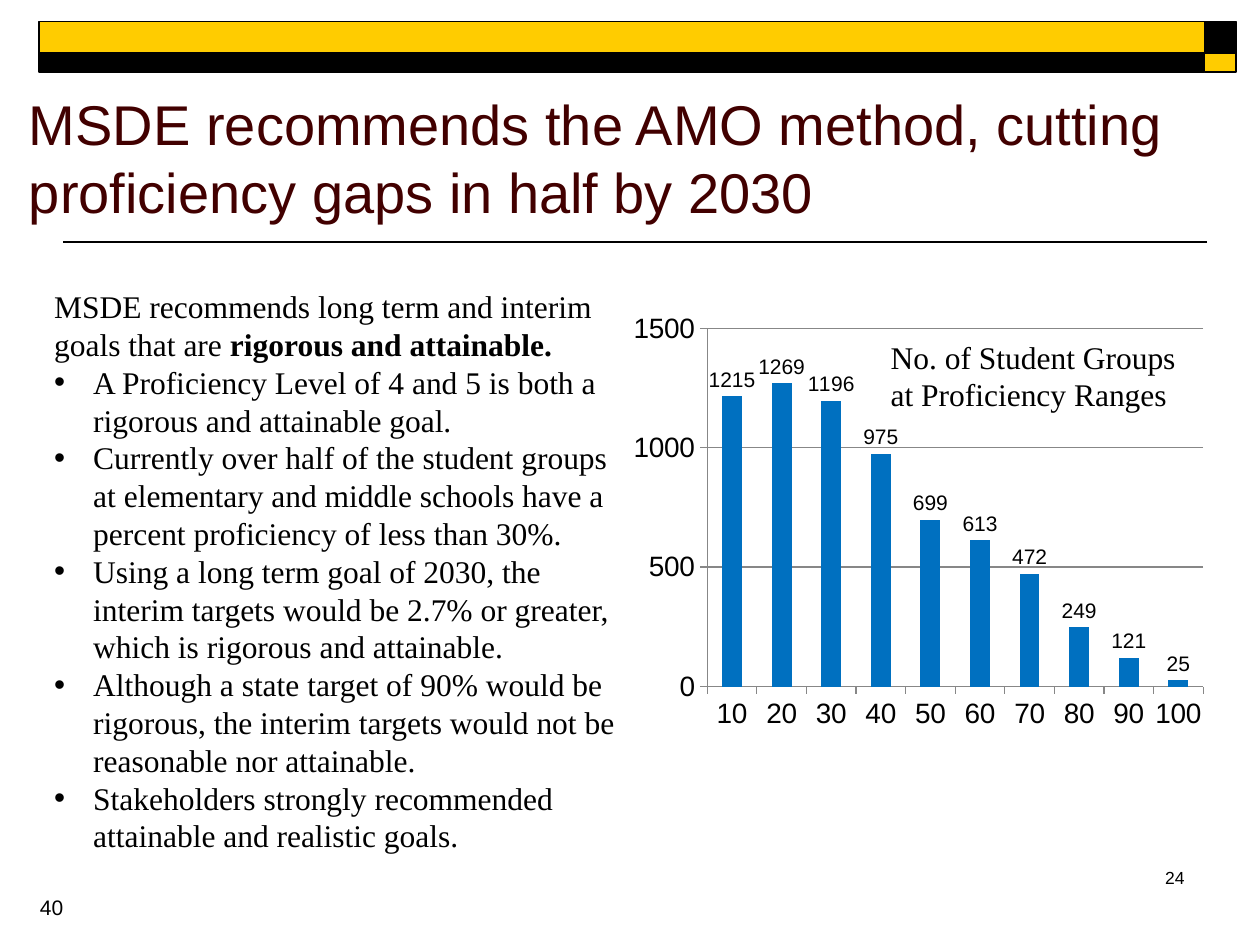
from lxml.etree import SubElement
from pptx import Presentation
from pptx.chart.data import CategoryChartData
from pptx.dml.color import RGBColor
from pptx.enum.chart import XL_CHART_TYPE, XL_LABEL_POSITION, XL_TICK_MARK
from pptx.enum.shapes import MSO_CONNECTOR, MSO_SHAPE
from pptx.enum.text import MSO_ANCHOR, MSO_AUTO_SIZE, PP_ALIGN
from pptx.oxml import parse_xml
from pptx.oxml.ns import nsdecls, qn
from pptx.util import Inches, Pt

TITLE = "MSDE recommends the AMO method, cutting proficiency gaps in half by 2030"
INTRO = [("MSDE recommends long term and interim goals that are ", False),
         ("rigorous and attainable.", True)]
BULLETS = [
    "A Proficiency Level of 4 and 5 is both a rigorous and attainable goal.",
    "Currently over half of the student groups at elementary and middle schools "
    "have a percent proficiency of less than 30%.",
    "Using a long term goal of 2030, the interim targets would be 2.7% or greater, "
    "which is rigorous and attainable.",
    "Although a state target of 90% would be rigorous, the interim targets would "
    "not be reasonable nor attainable.",
    "Stakeholders strongly recommended attainable and realistic goals.",
]
CHART_LABEL = "No. of Student Groups at Proficiency Ranges"
RANGES = [str(n) for n in range(10, 101, 10)]
GROUPS = [1215, 1269, 1196, 975, 699, 613, 472, 249, 121, 25]
PLOT = {"x": 0.141, "y": 0.088, "w": 0.8, "h": 0.666}
PAGE_NUMBERS = [
    ("24", (7.42, 6.83, 2.08, 0.5), PP_ALIGN.RIGHT, "number"),
    ("40", (-0.63, 7.05, 2.08, 0.5), PP_ALIGN.CENTER, "page"),
]
BAND_COLS = [(0.31, 9.25), (9.56, 0.25)]
BAND_ROWS = [(0.17, 0.25), (0.42, 0.15)]
BAND_FILLS = [("gold", "black"), ("black", "gold")]

THEME = {
    "black": RGBColor.from_string("000000"),
    "white": RGBColor.from_string("FFFFFF"),
    "gold": RGBColor.from_string("FFCC00"),
    "maroon": RGBColor.from_string("420000"),
    "bar": RGBColor.from_string("0070C0"),
    "grid": RGBColor.from_string("878787"),
    "title": {"name": "Arial", "size": Pt(32), "color": "maroon"},
    "body": {"name": "Times New Roman", "size": Pt(18), "color": "black"},
    "number": {"name": "Arial", "size": Pt(10), "color": "black"},
    "page": {"name": "Arial", "size": Pt(12), "color": "black"},
    "axis": {"name": "Arial", "size": Pt(16), "color": "black"},
    "value": {"name": "Arial", "size": Pt(12), "color": "black"},
}


def inches(box):
    return [Inches(v) for v in box]


def style(font, key, bold=False):
    for attr, value in {**THEME[key], "bold": bold}.items():
        if attr == "color":
            font.color.rgb = THEME[value]
        else:
            setattr(font, attr, value)


def place(sp, box):
    for attr, value in zip(("left", "top", "width", "height"), inches(box)):
        setattr(sp, attr, value)


def frame(sp, anchor=MSO_ANCHOR.TOP, auto_size=MSO_AUTO_SIZE.NONE):
    tf = sp.text_frame
    for attr, value in {"word_wrap": True, "vertical_anchor": anchor,
                        "auto_size": auto_size}.items():
        setattr(tf, attr, value)
    return tf


def write(p, runs, key, align=PP_ALIGN.LEFT):
    p.alignment = align
    p.space_before = Pt(0)
    for text, bold in runs:
        r = p.add_run()
        r.text = text
        style(r.font, key, bold)


def set_bullet(p, char=None):
    pPr = p._p.get_or_add_pPr()
    indent = Inches(0.31) if char else 0
    pPr.set("marL", str(indent))
    pPr.set("indent", str(-indent))
    if char:
        SubElement(pPr, qn("a:buFont"), typeface="Arial")
        SubElement(pPr, qn("a:buChar"), char=char)
    else:
        SubElement(pPr, qn("a:buNone"))


def add_rect(s, box, fill, line=None):
    sp = s.shapes.add_shape(MSO_SHAPE.RECTANGLE, *inches(box))
    sp.shadow.inherit = False
    sp.fill.solid()
    sp.fill.fore_color.rgb = THEME[fill]
    if line:
        sp.line.color.rgb = THEME[line]
        sp.line.width = Pt(1)
    else:
        sp.line.fill.background()
    return sp


def add_banner(s):
    rule = s.shapes.add_connector(MSO_CONNECTOR.STRAIGHT, *inches((9.58, 1.92, 0.5, 1.92)))
    rule.line.color.rgb = THEME["black"]
    rule.line.width = Pt(1)
    SubElement(rule._element.spPr, qn("a:effectLst"))
    for (top, height), fills in zip(BAND_ROWS, BAND_FILLS):
        for (left, width), fill in zip(BAND_COLS, fills):
            add_rect(s, (left, top, width, height), fill, "black")


def add_group_chart(s):
    data = CategoryChartData()
    data.categories = RANGES
    data.add_series("Series 1", GROUPS)
    chart = s.shapes.add_chart(XL_CHART_TYPE.COLUMN_CLUSTERED,
                               *inches((4.92, 2.23, 4.92, 4.27)), data).chart
    chart.has_legend = chart.has_title = False
    style(chart.font, "axis")
    for axis in (chart.category_axis, chart.value_axis):
        axis.major_tick_mark = XL_TICK_MARK.OUTSIDE
        axis.minor_tick_mark = XL_TICK_MARK.NONE
        axis.format.line.color.rgb = THEME["grid"]
        style(axis.tick_labels.font, "axis")
    chart.category_axis.has_major_gridlines = False
    for attr, value in {"minimum_scale": 0, "maximum_scale": 1500, "major_unit": 500,
                        "has_major_gridlines": True}.items():
        setattr(chart.value_axis, attr, value)
    chart.value_axis.major_gridlines.format.line.color.rgb = THEME["grid"]

    plot = chart.plots[0]
    plot.gap_width = 150
    plot.vary_by_categories = False
    series = plot.series[0]
    series.format.fill.solid()
    series.format.fill.fore_color.rgb = THEME["bar"]
    labels = series.data_labels
    labels.show_value = True
    labels.position = XL_LABEL_POSITION.OUTSIDE_END
    style(labels.font, "value")

    area = chart._chartSpace.chart.plotArea
    for old in area.findall(qn("c:layout")):
        area.remove(old)
    sizes = "".join(f'<c:{k} val="{v}"/>' for k, v in PLOT.items())
    area.insert(0, parse_xml(
        f'<c:layout {nsdecls("c")}><c:manualLayout><c:layoutTarget val="inner"/>'
        f'<c:xMode val="edge"/><c:yMode val="edge"/>{sizes}</c:manualLayout></c:layout>'))


def main():
    prs = Presentation()
    prs.slide_width, prs.slide_height = Inches(10), Inches(7.5)
    s = prs.slides.add_slide(prs.slide_layouts[1])
    add_banner(s)

    title, body = s.shapes.title, s.placeholders[1]
    place(title, (0.13, 0.58, 10.28, 1.25))
    write(frame(title, MSO_ANCHOR.BOTTOM).paragraphs[0], [(TITLE, False)], "title")

    place(body, (0.33, 2.23, 4.83, 4.64))
    tf = frame(body)
    set_bullet(tf.paragraphs[0])
    write(tf.paragraphs[0], INTRO, "body")
    for text in BULLETS:
        p = tf.add_paragraph()
        set_bullet(p, "•")
        write(p, [(text, False)], "body")

    add_group_chart(s)
    label = add_rect(s, (6.97, 2.63, 2.7, 0.71), "white")
    tf = frame(label, auto_size=MSO_AUTO_SIZE.SHAPE_TO_FIT_TEXT)
    write(tf.paragraphs[0], [(CHART_LABEL, False)], "body")

    for text, box, align, key in PAGE_NUMBERS:
        tf = frame(s.shapes.add_textbox(*inches(box)))
        write(tf.paragraphs[0], [(text, False)], key, align)
    prs.save("out.pptx")


if __name__ == "__main__":
    main()
